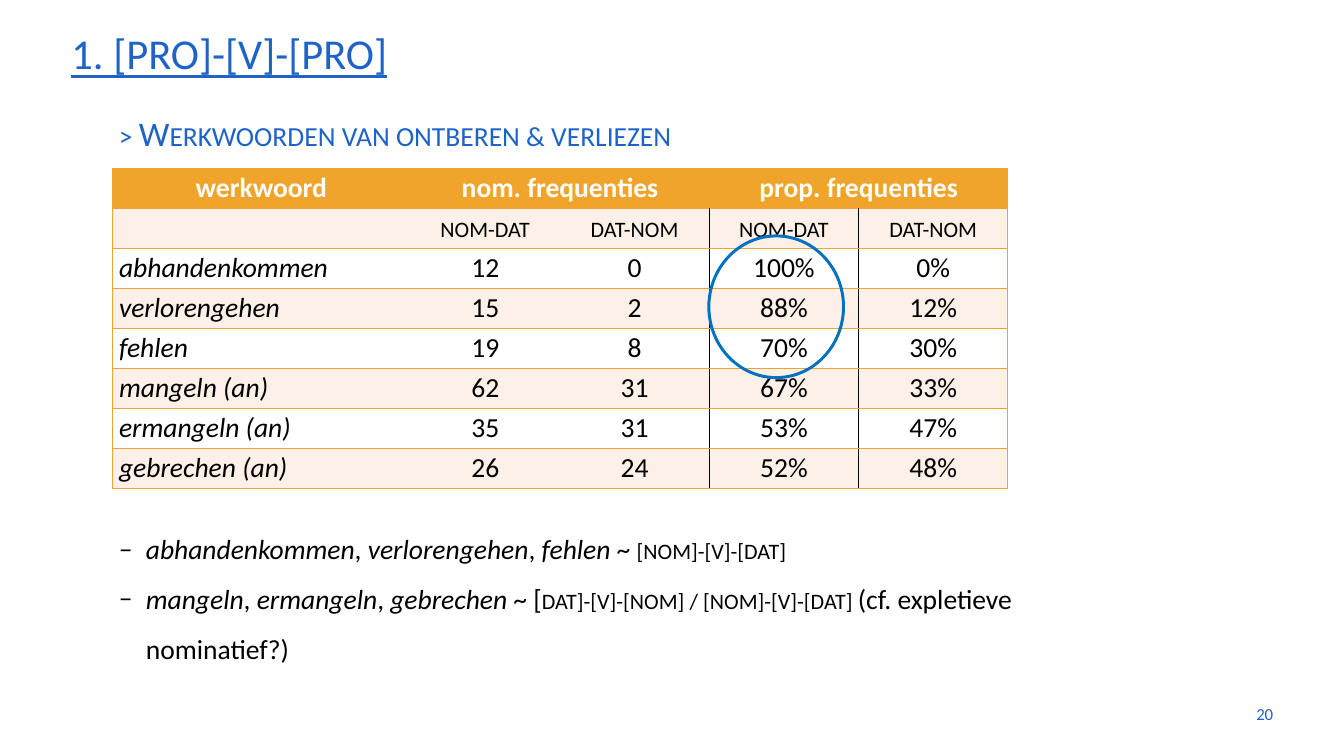
from lxml.etree import SubElement
from pptx import Presentation
from pptx.dml.color import RGBColor
from pptx.enum.shapes import MSO_SHAPE as Shape
from pptx.enum.text import MSO_ANCHOR as Anchor, PP_ALIGN as Align
from pptx.oxml.ns import qn
from pptx.util import Pt

BLUE = RGBColor(0x1E, 0x64, 0xC8)
RING_BLUE = RGBColor(0x00, 0x70, 0xC0)
ORANGE = RGBColor(0xF1, 0xA4, 0x2B)
CREAM = RGBColor(0xFC, 0xF0, 0xE8)
WHITE = RGBColor(0xFF, 0xFF, 0xFF)
BLACK = RGBColor(0x00, 0x00, 0x00)

FONT = "Calibri"
NO_TABLE_STYLE = "{2D5ABB26-0587-4C30-8999-92F81FD0307C}"
UNIT_WIDTH = 151.68
ROW_HEIGHT = 40.75

HEADINGS = ["werkwoord", "nom. frequenties", "", "prop. frequenties", ""]
ORDERS = ["", "nom-dat", "dat-nom", "nom-dat", "dat-nom"]
VERBS = [
    ["abhandenkommen", "12", "0", "100%", "0%"],
    ["verlorengehen", "15", "2", "88%", "12%"],
    ["fehlen", "19", "8", "70%", "30%"],
    ["mangeln (an)", "62", "31", "67%", "33%"],
    ["ermangeln (an)", "35", "31", "53%", "47%"],
    ["gebrechen (an)", "26", "24", "52%", "48%"],
]
# Each conclusion: its verbs, then the pieces that follow as (text, small caps)
CONCLUSIONS = [
    (["abhandenkommen", "verlorengehen", "fehlen"],
     [(" ~ ", False), ("[nom]-[v]-[dat]", True)]),
    (["mangeln", "ermangeln", "gebrechen"],
     [(" ~ [", False), ("dat]-[v]-[nom] / [nom]-[v]-[dat] ", True),
      ("(cf. expletieve nominatief?)", False)]),
]


def write(paragraph, text, size=28, color=BLACK, bold=False, italic=False,
          underline=False, small_caps=False):
    run = paragraph.add_run()
    run.text = text
    font = run.font
    font.name, font.size, font.color.rgb = FONT, Pt(size), color
    font.bold, font.italic, font.underline = bold, italic, underline
    if small_caps:
        run._r.get_or_add_rPr().set("cap", "small")


def add_box(slide, left, top, width, height, anchor=Anchor.TOP):
    frame = slide.shapes.add_textbox(Pt(left), Pt(top), Pt(width), Pt(height)).text_frame
    frame.word_wrap = True
    frame.vertical_anchor = anchor
    return frame


def add_line(slide, text, left, top, width, height, spacing=1.0,
             align=Align.LEFT, anchor=Anchor.TOP, **style):
    line = add_box(slide, left, top, width, height, anchor).paragraphs[0]
    line.line_spacing = spacing
    line.alignment = align
    write(line, text, color=BLUE, **style)


def set_border(cell, side, color):
    border = SubElement(cell._tc.get_or_add_tcPr(), qn(f"a:ln{side}"), w=str(Pt(1)))
    fill = SubElement(border, qn("a:solidFill"))
    SubElement(fill, qn("a:srgbClr"), val=str(color))


def fill_cell(cell, text, row, column):
    # Orange frame and rules, black lines around the proportional columns
    sides = {}
    if column == 0:
        sides["L"] = ORANGE
    elif column >= 3 and row > 0:
        sides["L"] = BLACK
    if column == 4:
        sides["R"] = ORANGE
    elif column >= 2 and row > 0:
        sides["R"] = BLACK
    sides.update(T=ORANGE, B=ORANGE)
    for side, color in sides.items():
        set_border(cell, side, color)

    cell.fill.solid()
    cell.fill.fore_color.rgb = ORANGE if row == 0 else CREAM if row % 2 else WHITE
    cell.margin_top = cell.margin_bottom = Pt(3)
    if text:
        is_verb = row > 1 and column == 0
        line = cell.text_frame.paragraphs[0]
        line.alignment = Align.LEFT if is_verb else Align.CENTER
        write(line, text, color=BLACK if row else WHITE, bold=row == 0,
              italic=is_verb, small_caps=row == 1)


def add_frequencies(slide, left, top):
    rows = [HEADINGS, ORDERS] + VERBS
    frame = slide.shapes.add_table(len(rows), len(HEADINGS), Pt(left), Pt(top),
                                   Pt(6 * UNIT_WIDTH), Pt(len(rows) * ROW_HEIGHT))
    table = frame.table
    table.first_row = table.horz_banding = False
    table._tbl.tblPr.find(qn("a:tableStyleId")).text = NO_TABLE_STYLE
    for column, band in enumerate(table.columns):
        band.width = Pt(UNIT_WIDTH * (1 if column else 2))
    for row, texts in enumerate(rows):
        table.rows[row].height = Pt(ROW_HEIGHT)
        for column, text in enumerate(texts):
            fill_cell(table.cell(row, column), text, row, column)
    for column in (1, 3):
        table.cell(0, column).merge(table.cell(0, column + 1))


def add_ring(slide, left, top, width, height):
    ring = slide.shapes.add_shape(Shape.OVAL, Pt(left), Pt(top), Pt(width), Pt(height))
    ring.shadow.inherit = False
    ring.fill.background()
    ring.line.color.rgb = RING_BLUE
    ring.line.width = Pt(3)


def add_conclusions(slide, left, top, width, height):
    frame = add_box(slide, left, top, width, height)
    for index, (verbs, pieces) in enumerate(CONCLUSIONS):
        item = frame.add_paragraph() if index else frame.paragraphs[0]
        item.line_spacing = 1.5
        properties = item._p.get_or_add_pPr()
        properties.set("marL", str(Pt(27.36)))
        properties.set("indent", str(-Pt(27.36)))
        SubElement(properties, qn("a:buFont"), typeface=FONT)
        SubElement(properties, qn("a:buChar"), char="–")
        for position, verb in enumerate(verbs):
            if position:
                write(item, ", ")
            write(item, verb, italic=True)
        for text, small_caps in pieces:
            write(item, text, small_caps=small_caps)


def main():
    deck = Presentation()
    deck.slide_width, deck.slide_height = Pt(1365.12), Pt(768.24)
    slide = deck.slides.add_slide(deck.slide_layouts[6])

    # Title, page number and subtitle
    add_line(slide, "1. [pro]-[v]-[pro]", 65.52, 20.16, 1236.96, 67.68,
             spacing=0.9, size=54, underline=True, small_caps=True)
    add_line(slide, "20", 1227.6, 704.88, 72.72, 41.04,
             align=Align.RIGHT, anchor=Anchor.MIDDLE, size=17.1)
    add_line(slide, "> Werkwoorden van ontberen & verliezen", 113.76, 102.24, 668.16, 54,
             spacing=1.2, size=35, small_caps=True)

    # Conclusions below the table
    add_conclusions(slide, 113.76, 520.56, 1004.4, 205.2)

    # Frequencies, with the highest shares circled
    add_frequencies(slide, 113.76, 170.64)
    add_ring(slide, 720, 239.76, 136.8, 144)

    deck.save("out.pptx")


if __name__ == "__main__":
    main()
